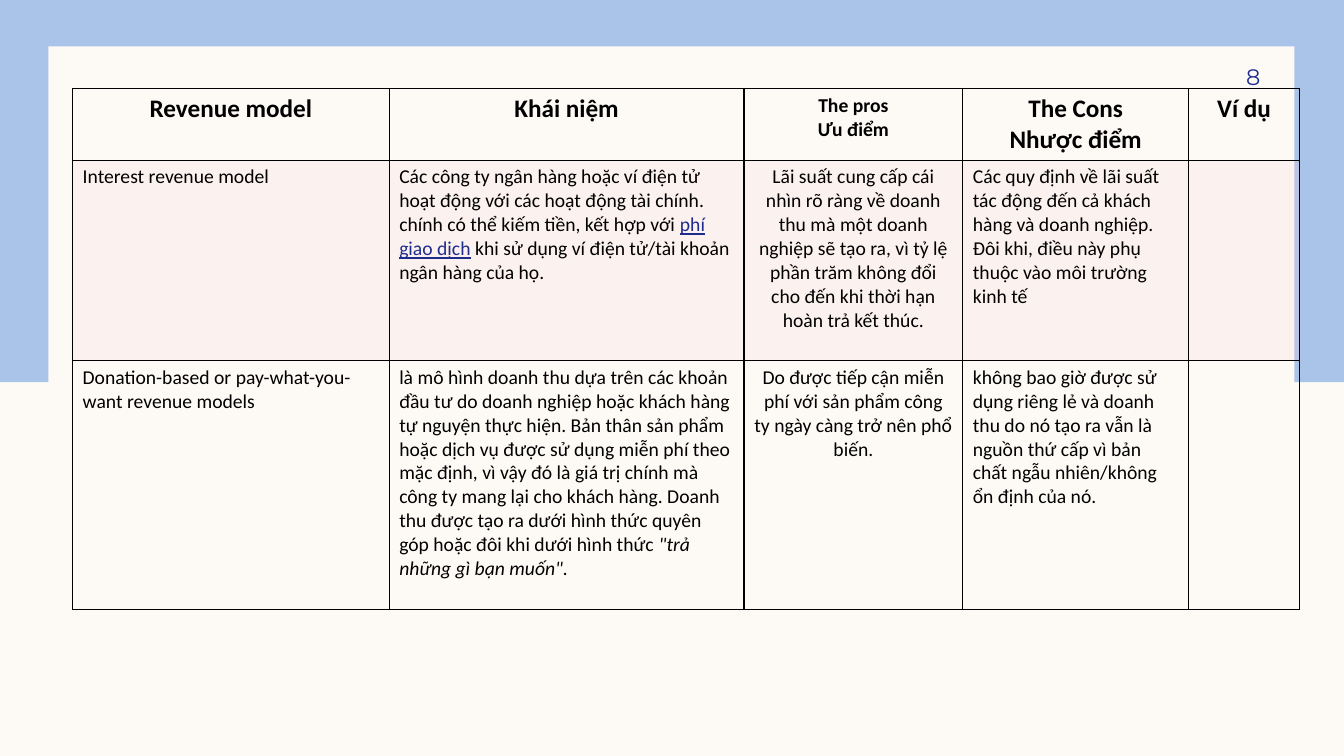
from lxml import etree
from pptx import Presentation
from pptx import util as u
from pptx.dml.color import RGBColor
from pptx.enum import shapes, text
from pptx.oxml.ns import qn

CREAM, BLUE, NAVY, PINK, BLACK = "FDFAF6", "AAC3E8", "1F2C8F", "F5CDCE", "000000"
LEFT, CENTER, RIGHT = text.PP_ALIGN.LEFT, text.PP_ALIGN.CENTER, text.PP_ALIGN.RIGHT

PAGE_NUMBER = "8"
# Each cell is a list of paragraphs; each paragraph is a list of (text, run format).
HEADINGS = [
    [[("Revenue model", {})]],
    [[("Khái niệm", {})]],
    [[("The pros", {"size": 14})], [("Ưu điểm", {"size": 14})]],
    [[("The Cons", {})], [("Nhược điểm", {})]],
    [[("Ví dụ", {})]],
]
MODELS = [
    [
        [[("Interest revenue model", {})]],
        [
            [("Các công ty ngân hàng hoặc ví điện tử hoạt động với các hoạt động tài chính.", {})],
            [("chính có thể kiếm tiền, kết hợp với ", {}),
             ("phí giao dịch", {"color": NAVY, "underline": True}),
             (" khi sử dụng ví điện tử/tài khoản ngân hàng của họ.", {})],
        ],
        [[("Lãi suất cung cấp cái nhìn rõ ràng về doanh thu mà một doanh nghiệp sẽ tạo ra, "
           "vì tỷ lệ phần trăm không đổi cho đến khi thời hạn hoàn trả kết thúc.", {})]],
        [[("Các quy định về lãi suất tác động đến cả khách hàng và doanh nghiệp. "
           "Đôi khi, điều này phụ thuộc vào môi trường kinh tế", {})]],
        [],
    ],
    [
        [[("Donation-based or pay-what-you-want revenue models", {})]],
        [[("là mô hình doanh thu dựa trên các khoản đầu tư do doanh nghiệp hoặc khách hàng "
           "tự nguyện thực hiện. Bản thân sản phẩm hoặc dịch vụ được sử dụng miễn phí theo "
           "mặc định, vì vậy đó là giá trị chính mà công ty mang lại cho khách hàng. Doanh "
           "thu được tạo ra dưới hình thức quyên góp hoặc đôi khi dưới hình thức ", {}),
          ('"trả những gì bạn muốn".', {"italic": True})]],
        [[("Do được tiếp cận miễn phí với sản phẩm công ty ngày càng trở nên phổ biến.", {})]],
        [[("không bao giờ được sử dụng riêng lẻ và doanh thu do nó tạo ra vẫn là nguồn thứ "
           "cấp vì bản chất ngẫu nhiên/không ổn định của nó.", {})]],
        [],
    ],
]
COLUMN_WIDTHS = [3.14, 3.52, 2.17, 2.24, 1.1]
ROW_HEIGHTS = [0.71, 1.99, 2.47]
PROS_COLUMN = 2


def rgb(color):
    return RGBColor.from_string(color)


def add_run(paragraph, words, size=14, font="Calibri", color=BLACK, bold=False,
            italic=False, underline=False):
    run = paragraph.add_run()
    run.text = words
    run.font.size, run.font.name = u.Pt(size), font
    run.font.color.rgb = rgb(color)
    run.font.bold, run.font.italic, run.font.underline = bold, italic, underline


def write(frame, paragraphs, align=LEFT, **base):
    for index, runs in enumerate(paragraphs):
        paragraph = frame.add_paragraph() if index else frame.paragraphs[0]
        paragraph.alignment = align
        for words, changes in runs:
            add_run(paragraph, words, **{**base, **changes})


def add_panel(slide, box, color):
    panel = slide.shapes.add_shape(shapes.MSO_SHAPE.RECTANGLE, *map(u.Inches, box))
    panel.shadow.inherit = False
    panel.fill.solid()
    panel.fill.fore_color.rgb = rgb(color)
    panel.line.fill.background()


def add_borders(cell, color=BLACK, width=1):
    properties = cell._tc.get_or_add_tcPr()
    for side in ("a:lnL", "a:lnR", "a:lnT", "a:lnB"):
        line = etree.SubElement(properties, qn(side), w=str(u.Pt(width)))
        fill = etree.SubElement(line, qn("a:solidFill"))
        etree.SubElement(fill, qn("a:srgbClr"), val=color)


def tint(cell, color, percent):
    """Fill the cell with a see-through colour."""
    cell.fill.solid()
    cell.fill.fore_color.rgb = rgb(color)
    shade = cell._tc.tcPr.find(qn("a:solidFill")).find(qn("a:srgbClr"))
    etree.SubElement(shade, qn("a:alpha"), val=str(percent * 1000))


def add_page_number(slide):
    box = slide.shapes.add_textbox(*map(u.Inches, (11.33, 0.5, 1.17, 0.52)))
    frame = box.text_frame
    frame.word_wrap = True
    frame.vertical_anchor = text.MSO_ANCHOR.MIDDLE
    frame.margin_right = 0
    write(frame, [[(PAGE_NUMBER, {})]], RIGHT, size=16, font="Montserrat", color=NAVY)


def add_model_table(slide):
    rows = [HEADINGS] + MODELS
    table = slide.shapes.add_table(
        len(rows), len(COLUMN_WIDTHS), u.Inches(0.72), u.Inches(0.88),
        u.Inches(sum(COLUMN_WIDTHS)), u.Inches(sum(ROW_HEIGHTS))).table
    table.first_row = table.horz_banding = False
    for column, width in zip(table.columns, COLUMN_WIDTHS):
        column.width = u.Inches(width)
    for row, height in zip(table.rows, ROW_HEIGHTS):
        row.height = u.Inches(height)
    for r, row in enumerate(rows):
        heading = r == 0
        for c, paragraphs in enumerate(row):
            cell = table.cell(r, c)
            add_borders(cell)
            if r % 2:
                tint(cell, PINK, 20)
            else:
                cell.fill.background()
            write(cell.text_frame, paragraphs,
                  CENTER if heading or c == PROS_COLUMN else LEFT,
                  size=18 if heading else 14, bold=heading)


def main():
    deck = Presentation()
    deck.slide_width, deck.slide_height = u.Inches(13.33), u.Inches(7.5)
    slide = deck.slides.add_slide(deck.slide_layouts[6])
    slide.background.fill.solid()
    slide.background.fill.fore_color.rgb = rgb(CREAM)
    add_panel(slide, (0, 0, 13.33, 3.79), BLUE)
    add_panel(slide, (0.48, 0.46, 12.36, 6.59), CREAM)
    add_page_number(slide)
    add_model_table(slide)
    deck.save("out.pptx")


if __name__ == "__main__":
    main()
